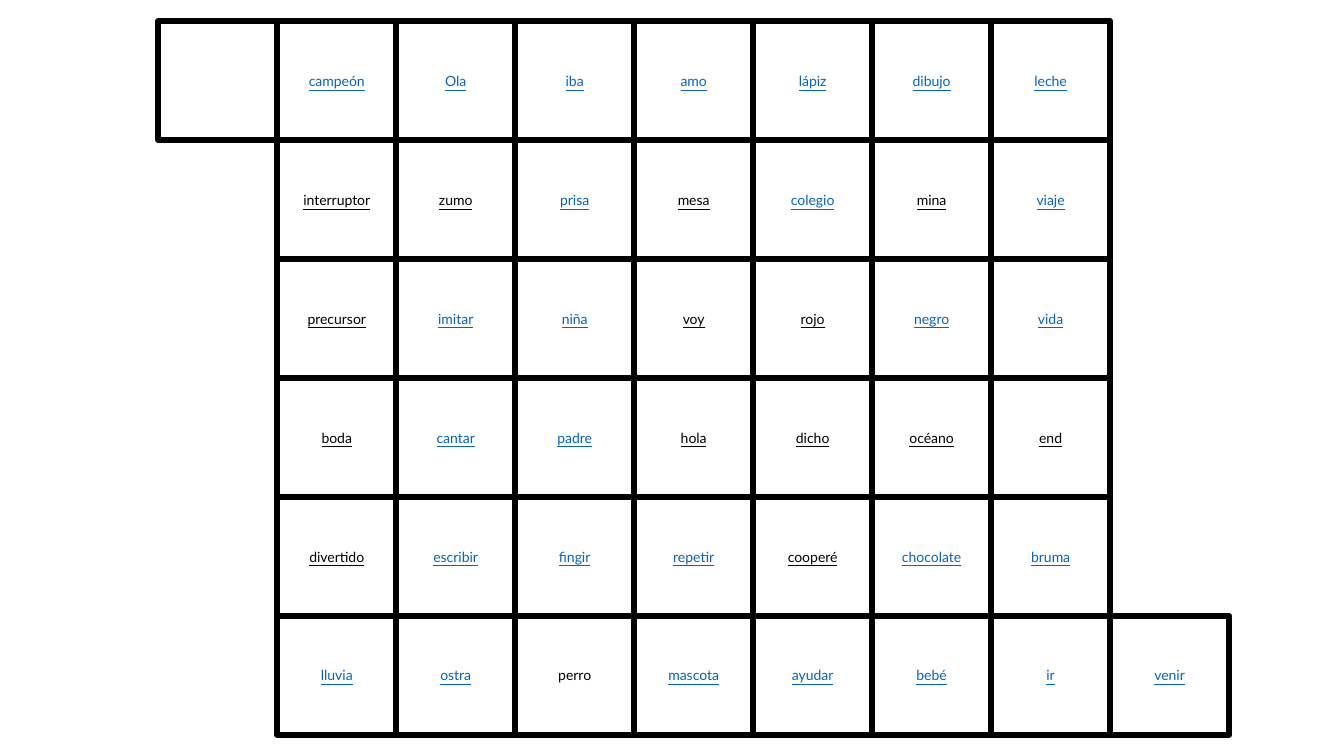
from pptx import Presentation
from pptx import util as u
from pptx.dml.color import RGBColor
from pptx.enum import shapes, text

BLACK = RGBColor(0x00, 0x00, 0x00)
WHITE = RGBColor(0xFF, 0xFF, 0xFF)
BLUE = RGBColor(0x05, 0x63, 0xC1)

LEFT, TOP, CELL = 1.57, 0.21, 1.18

WORD_ROWS = [
    (0, ["", "campeón", "Ola", "iba", "amo", "lápiz", "dibujo", "leche"]),
    (1, ["interruptor", "zumo", "prisa", "mesa", "colegio", "mina", "viaje"]),
    (1, ["precursor", "imitar", "niña", "voy", "rojo", "negro", "vida"]),
    (1, ["boda", "cantar", "padre", "hola", "dicho", "océano", "end"]),
    (1, ["divertido", "escribir", "fingir", "repetir", "cooperé", "chocolate", "bruma"]),
    (1, ["lluvia", "ostra", "perro", "mascota", "ayudar", "bebé", "ir", "venir"]),
]
BLACK_WORDS = {
    "interruptor", "zumo", "mesa", "mina", "precursor", "voy", "rojo", "boda",
    "hola", "dicho", "océano", "end", "divertido", "cooperé", "perro",
}
PLAIN_WORDS = {"perro"}


def write_text(frame, content, *, font, size, color, underline):
    frame.word_wrap = True
    frame.vertical_anchor = text.MSO_ANCHOR.MIDDLE
    paragraph = frame.paragraphs[0]
    paragraph.alignment = text.PP_ALIGN.CENTER
    run = paragraph.add_run()
    run.text = content
    run.font.name = font
    run.font.size = u.Pt(size)
    run.font.color.rgb = color
    run.font.underline = underline


class WordBoard:
    font = "Lato"
    text_size = 10
    border = 4.5

    def __init__(self, slide):
        self.slide = slide

    def square(self, left, top, side):
        shape = self.slide.shapes.add_shape(
            shapes.MSO_SHAPE.RECTANGLE,
            u.Inches(left), u.Inches(top), u.Inches(side), u.Inches(side),
        )
        shape.shadow.inherit = False
        shape.fill.solid()
        shape.fill.fore_color.rgb = WHITE
        shape.line.color.rgb = BLACK
        shape.line.width = u.Pt(self.border)
        return shape

    def word_square(self, row, column, word):
        shape = self.square(LEFT + column * CELL, TOP + row * CELL, CELL)
        if word:
            write_text(
                shape.text_frame, word,
                font=self.font,
                size=self.text_size,
                color=BLACK if word in BLACK_WORDS else BLUE,
                underline=word not in PLAIN_WORDS,
            )


def main():
    presentation = Presentation()
    presentation.slide_width = u.Inches(13.33)
    presentation.slide_height = u.Inches(7.5)
    board = WordBoard(presentation.slides.add_slide(presentation.slide_layouts[6]))
    for row, (first_column, words) in enumerate(WORD_ROWS):
        for column, word in enumerate(words, first_column):
            board.word_square(row, column, word)
    presentation.save("out.pptx")


if __name__ == "__main__":
    main()
